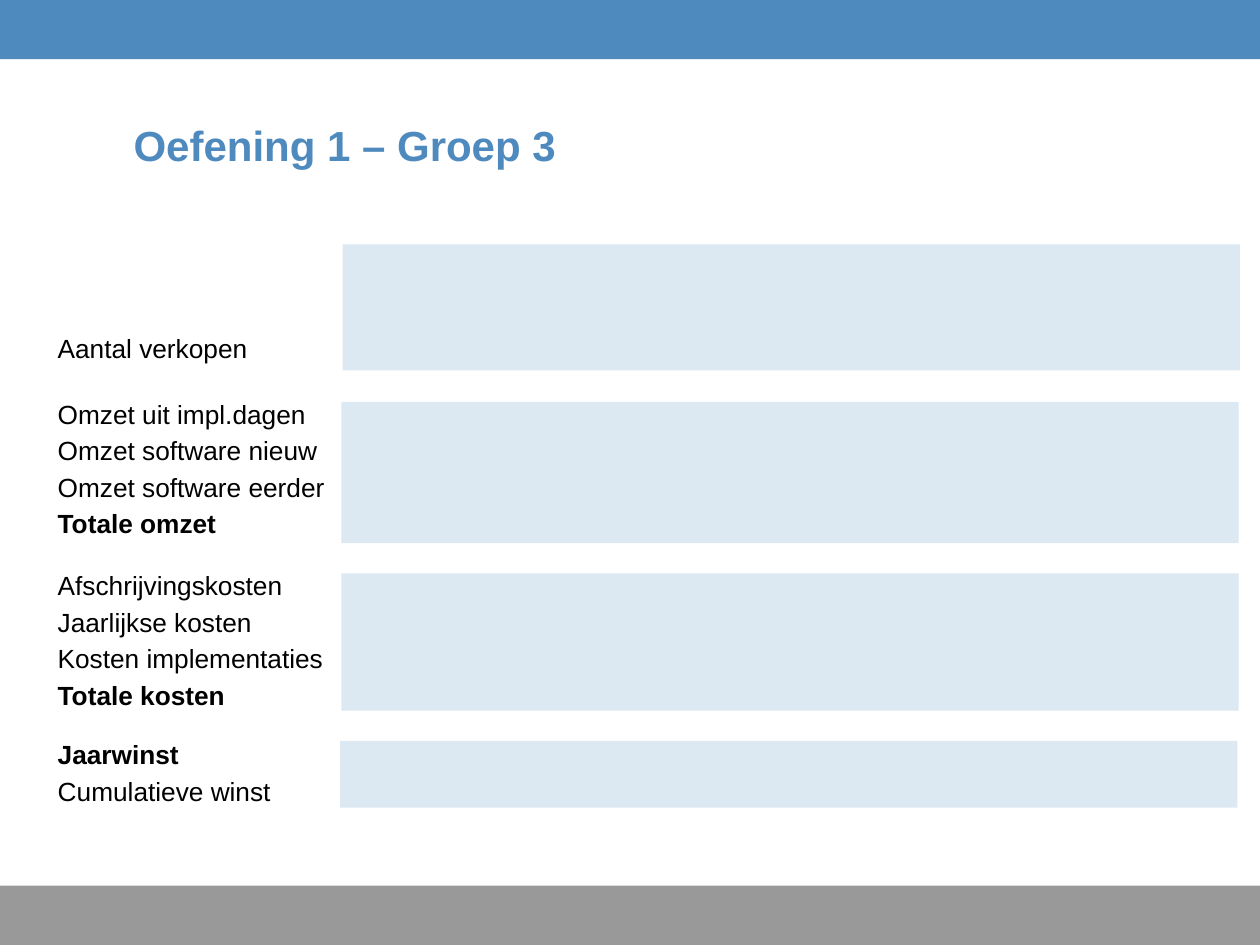
from pptx import Presentation
from pptx.dml.color import RGBColor
from pptx.enum.shapes import MSO_SHAPE
from pptx.enum.text import MSO_ANCHOR, MSO_AUTO_SIZE, PP_ALIGN
from pptx.util import Inches, Pt

COLORS = {"blue": "4E8ABE", "gray": "999999", "panel": "DCE8F2", "text": "000000"}
ROW_STEP = 0.29
LABEL_LEFT = 0.36

# Panel (left, top, height), top of first label, labels (text, width, bold)
GROUPS = [
    ((2.72, 1.94, 1.0), 2.59, [("Aantal verkopen", 1.73, False)]),
    ((2.71, 3.19, 1.12), 3.11, [
        ("Omzet uit impl.dagen", 2.19, False),
        ("Omzet software nieuw", 2.28, False),
        ("Omzet software eerder", 2.34, False),
        ("Totale omzet", 1.47, True),
    ]),
    ((2.71, 4.55, 1.09), 4.47, [
        ("Afschrijvingskosten", 2.01, False),
        ("Jaarlijkse kosten", 1.76, False),
        ("Kosten implementaties", 2.33, False),
        ("Totale kosten", 1.54, True),
    ]),
    ((2.7, 5.88, 0.53), 5.81, [
        ("Jaarwinst", 1.17, True),
        ("Cumulatieve winst", 1.91, False),
    ]),
]


class SlideBuilder:
    font = "Arial"

    def __init__(self, slide):
        self.s = slide

    def style(self, p, size, color, bold):
        p.alignment = PP_ALIGN.LEFT
        for r in p.runs:
            r.font.name = self.font
            r.font.size = Pt(size)
            r.font.bold = bold
            r.font.color.rgb = RGBColor.from_string(COLORS[color])

    def title(self, text, left, top, width, height):
        sp = self.s.shapes.title
        sp.left, sp.top = Inches(left), Inches(top)
        sp.width, sp.height = Inches(width), Inches(height)
        tf = sp.text_frame
        tf.text = text
        tf.margin_left = tf.margin_right = tf.margin_top = tf.margin_bottom = 0
        tf.vertical_anchor = MSO_ANCHOR.TOP
        p = tf.paragraphs[0]
        p.line_spacing = Pt(32)
        self.style(p, 24, "blue", True)

    def rect(self, left, top, width, height, color):
        sp = self.s.shapes.add_shape(MSO_SHAPE.RECTANGLE, Inches(left), Inches(top),
                                     Inches(width), Inches(height))
        sp.shadow.inherit = False
        sp.fill.solid()
        sp.fill.fore_color.rgb = RGBColor.from_string(COLORS[color])
        sp.line.fill.background()

    def label(self, text, left, top, width, bold):
        sp = self.s.shapes.add_textbox(Inches(left), Inches(top), Inches(width), Inches(0.35))
        tf = sp.text_frame
        tf.text = text
        tf.word_wrap = False
        tf.auto_size = MSO_AUTO_SIZE.SHAPE_TO_FIT_TEXT
        self.style(tf.paragraphs[0], 15, "text", bold)


def main():
    prs = Presentation()
    prs.slide_width, prs.slide_height = Inches(10), Inches(7.5)
    b = SlideBuilder(prs.slides.add_slide(prs.slide_layouts[5]))

    b.rect(0, 7.03, 10, 0.47, "gray")
    b.rect(0, 0, 10, 0.47, "blue")
    b.title("Oefening 1 – Groep 3", 1.06, 0.9, 7.87, 1.02)
    for (left, top, height), first_top, labels in GROUPS:
        b.rect(left, top, 7.12, height, "panel")
        for i, (text, width, bold) in enumerate(labels):
            b.label(text, LABEL_LEFT, first_top + i * ROW_STEP, width, bold)

    prs.save("out.pptx")


if __name__ == "__main__":
    main()
